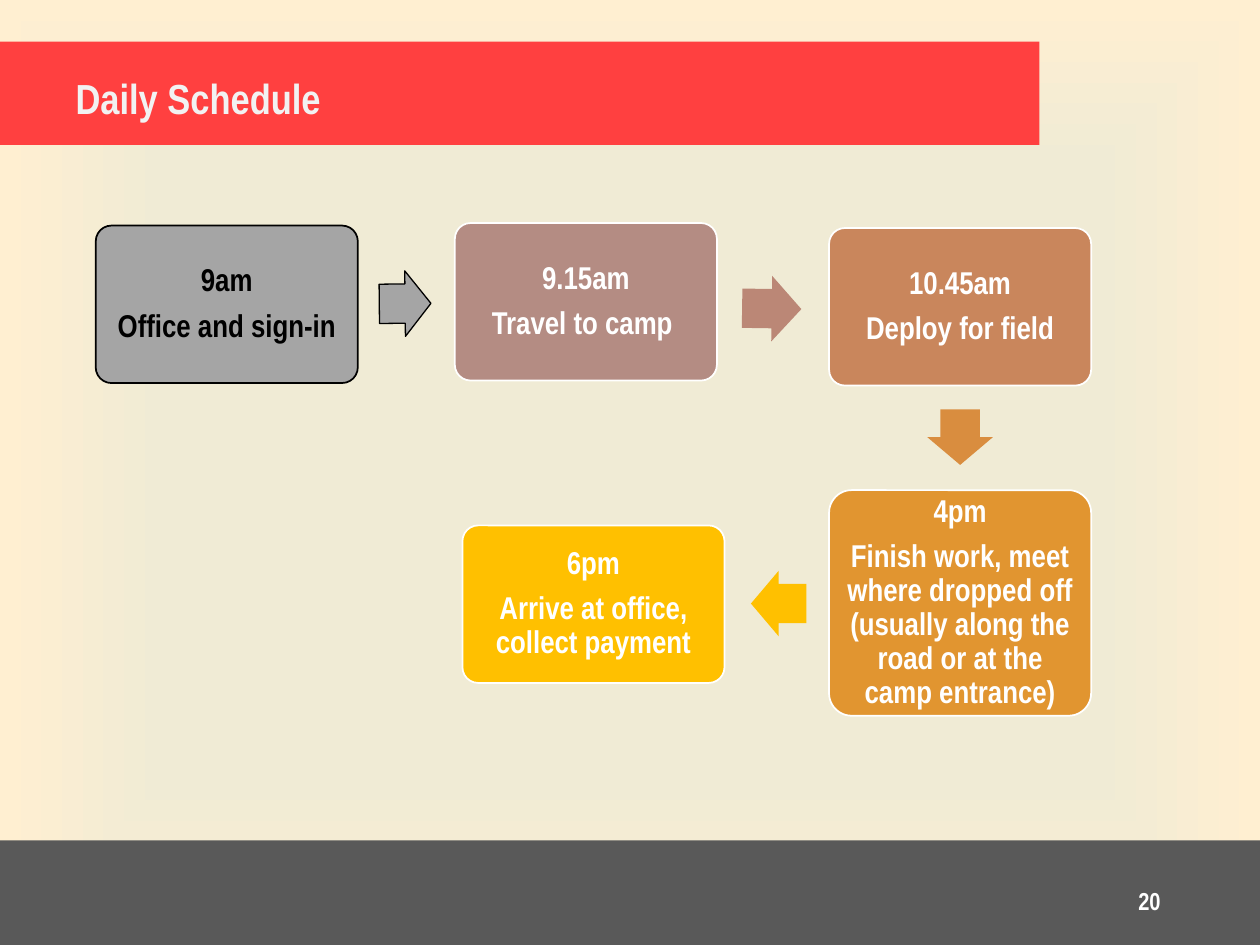
from lxml import etree
from pptx import Presentation
from pptx.dml.color import RGBColor
from pptx.enum.shapes import MSO_SHAPE as Shape
from pptx.enum.text import MSO_ANCHOR as Anchor, PP_ALIGN as Align
from pptx.oxml.ns import qn
from pptx.util import Inches, Pt

FONT = "Arial Narrow"
COLORS = {
    "field": "F0EBD5", "edge": "FFEFD1", "footer": "595959", "band": "FF4040",
    "title": "F2F2F2", "white": "FFFFFF", "black": "000000", "grey": "A5A5A5",
    "mauve": "B48C83", "rose": "BB8776", "clay": "C9865C",
    "amber": "D98D3F", "orange": "E19530", "gold": "FFC000",
}
STEP_WIDTH, STEP_HEIGHT = 2.08, 1.25

# left, top, height, fill, line and text colours, time, task, first-line indent
STEPS = [
    (0.76, 1.79, STEP_HEIGHT, "grey", "black", "black", "9am", "Office and sign-in", 0),
    (3.61, 1.77, STEP_HEIGHT, "mauve", "white", "white", "9.15am", "Travel to camp ", 0),
    (6.58, 1.81, STEP_HEIGHT, "clay", "white", "white", "10.45am", "Deploy for field", -0.24),
    (6.58, 3.89, 1.79, "orange", "white", "white", "4pm",
     "Finish work, meet where dropped off (usually along the road or at the camp entrance)", 0),
    (3.67, 4.17, STEP_HEIGHT, "gold", "white", "white", "6pm",
     "Arrive at office, collect payment", 0),
]
# left, top, width, rotation, fill, line
ARROWS = [
    (3.01, 2.15, 0.41, -0.6, "grey", "black"),
    (5.89, 2.19, 0.47, 0.9, "rose", None),
    (7.40, 3.21, 0.44, 90, "amber", None),
    (5.96, 4.53, 0.44, 180, "gold", None),
]


def color(name):
    return RGBColor.from_string(COLORS[name])


def add_block(page, kind, box, fill, line=None, weight=1):
    block = page.shapes.add_shape(kind, *(Inches(length) for length in box))
    block.shadow.inherit = False
    block.fill.solid()
    block.fill.fore_color.rgb = color(fill)
    if line:
        block.line.color.rgb = color(line)
        block.line.width = Pt(weight)
    else:
        block.line.fill.background()
    return block


def add_span(para, text, size, ink):
    span = para.add_run()
    span.text = text
    span.font.name = FONT
    span.font.size = Pt(size)
    span.font.bold = True
    span.font.color.rgb = color(ink)


def paint_background(page):
    """Fill the page with a gradient that is flat in the middle."""
    page.background.fill.gradient()
    gradient = next(page.element.iter(qn("a:gradFill")))
    for child in list(gradient):
        gradient.remove(child)
    stops = etree.SubElement(gradient, qn("a:gsLst"))
    for position, name in ((0, "field"), (65, "field"), (100, "edge")):
        stop = etree.SubElement(stops, qn("a:gs"), pos=str(position * 1000))
        etree.SubElement(stop, qn("a:srgbClr"), val=COLORS[name])
    outline = etree.SubElement(gradient, qn("a:path"))
    outline.set("path", "shape")
    etree.SubElement(outline, qn("a:fillToRect"),
                     {side: "50000" for side in "ltrb"})


def add_title(page, box, text):
    band = add_block(page, Shape.RECTANGLE, box, "band")
    frame = band.text_frame
    frame.word_wrap = True
    frame.vertical_anchor = Anchor.TOP
    frame.margin_left = Inches(0.6)
    para = frame.paragraphs[0]
    para.alignment = Align.LEFT
    para.line_spacing = 1.5
    add_span(para, text, 24, "title")


def add_footer(page, box, number):
    left, top, width, height = box
    add_block(page, Shape.RECTANGLE, box, "footer")
    number_box = page.shapes.add_textbox(Inches(left + width - 2.94), Inches(top + 0.28),
                                         Inches(2.25), Inches(0.4))
    frame = number_box.text_frame
    frame.word_wrap = True
    frame.vertical_anchor = Anchor.MIDDLE
    para = frame.paragraphs[0]
    para.alignment = Align.RIGHT
    add_span(para, number, 14, "white")


def add_step(page, box, fill, line, ink, time, task, indent):
    step = add_block(page, Shape.ROUNDED_RECTANGLE, box, fill, line)
    step.adjustments[0] = 0.1
    frame = step.text_frame
    frame.word_wrap = True
    frame.vertical_anchor = Anchor.MIDDLE
    frame.margin_left = frame.margin_right = Inches(0.07)
    frame.margin_top = frame.margin_bottom = Inches(0.07)
    for para, text in ((frame.paragraphs[0], time), (frame.add_paragraph(), task)):
        para.alignment = Align.CENTER
        para.line_spacing = 0.9
        para.space_after = Pt(6.3)
        add_span(para, text, 18, ink)
    if indent:
        properties = para._p.get_or_add_pPr()
        properties.set("marL", "0")
        properties.set("indent", str(Inches(indent)))


def add_arrow(page, box, rotation, fill, line):
    arrow = add_block(page, Shape.RIGHT_ARROW, box, fill, line, 0.75)
    arrow.adjustments[0] = 0.6
    arrow.adjustments[1] = 0.5
    arrow.rotation = rotation


def add_schedule(page):
    for left, top, height, *style in STEPS:
        add_step(page, (left, top, STEP_WIDTH, height), *style)
    for left, top, width, *style in ARROWS:
        add_arrow(page, (left, top, width, 0.52), *style)


def main():
    deck = Presentation()
    deck.slide_width, deck.slide_height = Inches(10), Inches(7.5)
    page = deck.slides.add_slide(deck.slide_layouts[6])
    paint_background(page)
    add_footer(page, (0, 6.67, 10, 0.83), "20")
    add_title(page, (0, 0.33, 8.25, 0.82), "Daily Schedule")
    add_schedule(page)
    deck.save("out.pptx")


if __name__ == "__main__":
    main()
